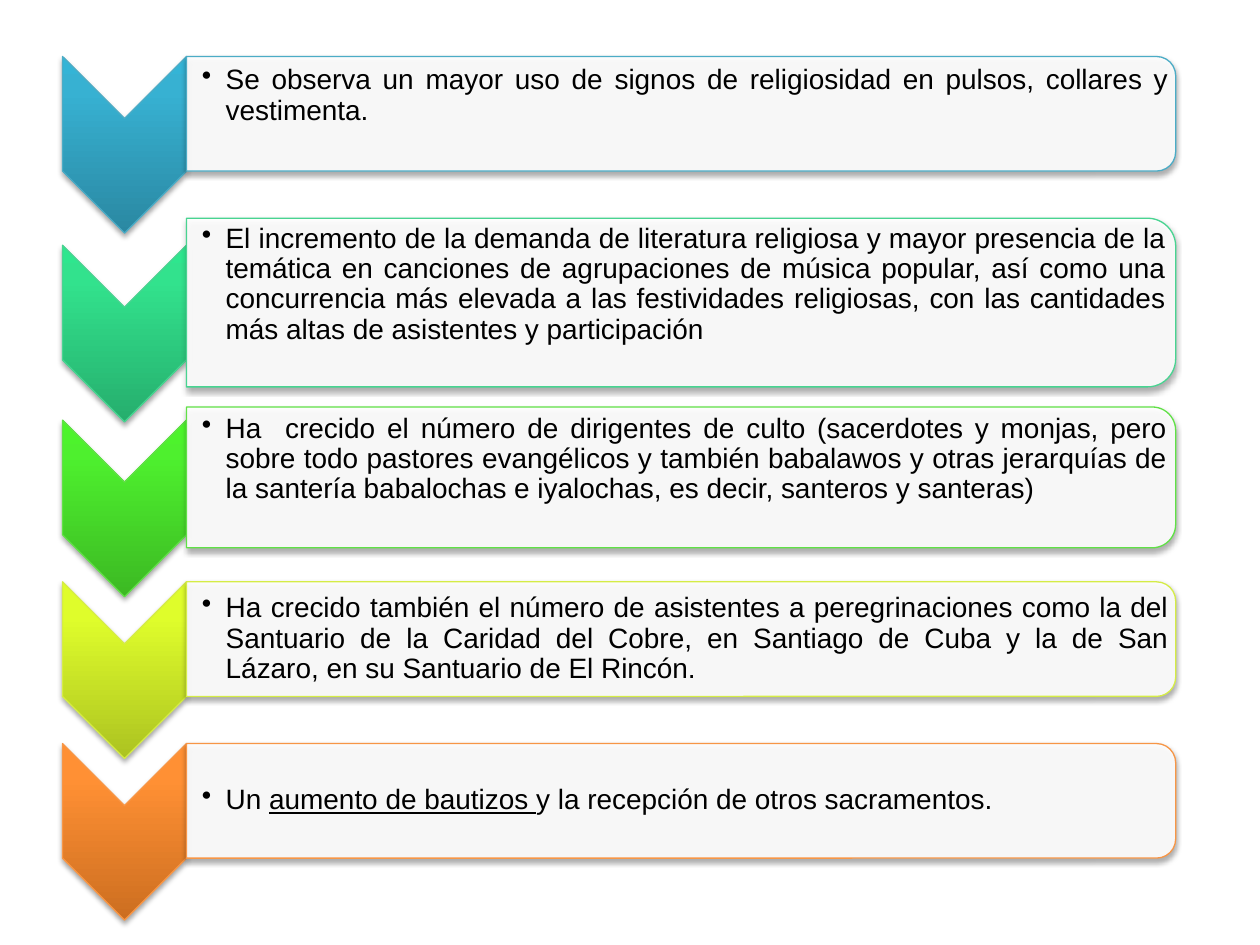
from lxml.etree import SubElement
from pptx import Presentation
from pptx.dml.color import RGBColor
from pptx.enum.shapes import MSO_SHAPE
from pptx.enum.text import MSO_ANCHOR, PP_ALIGN
from pptx.oxml import parse_xml
from pptx.oxml.ns import nsdecls, qn
from pptx.util import Cm, Pt

BLACK = RGBColor(0x00, 0x00, 0x00)
WHITE = RGBColor(0xFF, 0xFF, 0xFF)
# Line colour, then the gradient from bottom to top
BLUE = [RGBColor.from_string(c) for c in ("4BACC6", "2A88A2", "37B1D2", "34B4D6")]
TEAL = [RGBColor.from_string(c) for c in ("48D491", "26AE6D", "32E28D", "2EE68E")]
GREEN = [RGBColor.from_string(c) for c in ("60E146", "3CB923", "4EF02E", "4CF52A")]
LIME = [RGBColor.from_string(c) for c in ("D5EC46", "ACC321", "DFFD2B", "E1FF2B")]
ORANGE = [RGBColor.from_string(c) for c in ("F79646", "CC6E20", "FF9034", "FF9136")]

CHEVRON_LEFT, CHEVRON_WIDTH, CHEVRON_HEIGHT = Cm(1.26), Cm(2.5), Cm(3.56)
BOX_LEFT, BOX_WIDTH, BASE_HEIGHT = Cm(3.76), Cm(19.94), Cm(2.31)
ROW_PITCH = Cm(3.26)
FIRST_TOP = Cm(1.14)
LIFT = Cm(0.36)
JUSTIFY, LEFT = PP_ALIGN.JUSTIFY, PP_ALIGN.LEFT

# Palette, box height, text lift, alignment, (text, underlined) spans
ROWS = [
    (BLUE, BASE_HEIGHT, LIFT, JUSTIFY, [
        ("Se observa un mayor uso de signos de religiosidad en pulsos, collares y "
         "vestimenta.", False)]),
    (TEAL, Cm(3.4), LIFT, JUSTIFY, [
        ("El incremento de la demanda de literatura religiosa y mayor presencia de la "
         "temática en canciones de agrupaciones de música popular, así como una "
         "concurrencia más elevada a las festividades religiosas, con las cantidades "
         "más altas de asistentes y participación", False)]),
    (GREEN, Cm(2.84), LIFT, JUSTIFY, [
        ("Ha  crecido el número de dirigentes de culto (sacerdotes y monjas, pero "
         "sobre todo pastores evangélicos y también babalawos y otras jerarquías de "
         "la santería babalochas e iyalochas, es decir, santeros y santeras)", False)]),
    (LIME, BASE_HEIGHT, 0, JUSTIFY, [
        ("Ha crecido también el número de asistentes a peregrinaciones como la del "
         "Santuario de la Caridad del Cobre, en Santiago de Cuba y la de San "
         "Lázaro, en su Santuario de El Rincón.", False)]),
    (ORANGE, BASE_HEIGHT, 0, LEFT, [
        ("Un ", False), ("aumento de bautizos ", True),
        ("y la recepción de otros sacramentos.", False)]),
]


class ChevronList:
    """Draws the parts of a vertical chevron list on one slide."""

    font_name = "Arial"
    font_size = Pt(16)
    line_width = Pt(0.75)

    def __init__(self, page):
        self.page = page

    def turned_shape(self, kind, left, top, width, height, line_color):
        """Add a shape turned a quarter clockwise that shows in the given frame."""
        shift = (width - height) // 2
        shape = self.page.shapes.add_shape(kind, left + shift, top - shift, height, width)
        shape.rotation = 90
        shape.line.color.rgb = line_color
        shape.line.width = self.line_width
        shape.shadow.inherit = False
        effects = shape.element.spPr.find(qn("a:effectLst"))
        effects.append(parse_xml(
            f'<a:outerShdw {nsdecls("a")} blurRad="{Pt(3.1)}" dist="{Pt(1.8)}" '
            'dir="5400000" rotWithShape="0"><a:srgbClr val="000000">'
            '<a:alpha val="35000"/></a:srgbClr></a:outerShdw>'))
        return shape

    def chevron(self, top, palette):
        line_color, dark, middle, light = palette
        shape = self.turned_shape(MSO_SHAPE.CHEVRON, CHEVRON_LEFT, top,
                                  CHEVRON_WIDTH, CHEVRON_HEIGHT, line_color)
        shape.fill.background()
        properties = shape.element.spPr
        stops = "".join(
            f'<a:gs pos="{position}"><a:srgbClr val="{color}"/></a:gs>'
            for position, color in ((0, dark), (80000, middle), (100000, light)))
        gradient = parse_xml(
            f'<a:gradFill {nsdecls("a")} rotWithShape="0"><a:gsLst>{stops}</a:gsLst>'
            '<a:lin ang="16200000" scaled="0"/></a:gradFill>')
        properties.replace(properties.find(qn("a:noFill")), gradient)

    def box(self, top, height, line_color):
        shape = self.turned_shape(MSO_SHAPE.ROUND_2_SAME_RECTANGLE, BOX_LEFT, top,
                                  BOX_WIDTH, height, line_color)
        shape.fill.solid()
        shape.fill.fore_color.rgb = WHITE
        color = shape.element.spPr.find(qn("a:solidFill"))[0]
        SubElement(color, qn("a:alpha"), val="90000")

    def bullet_text(self, top, height, alignment, spans):
        width = BOX_WIDTH - int(height * 0.05)  # keeps clear of the round corners
        frame = self.page.shapes.add_textbox(BOX_LEFT, top, width, height).text_frame
        frame.word_wrap = True
        frame.vertical_anchor = MSO_ANCHOR.MIDDLE
        frame.margin_left = Cm(0.31)
        frame.margin_top = frame.margin_right = frame.margin_bottom = Cm(0.03)
        para = frame.paragraphs[0]
        para.alignment = alignment
        para.line_spacing = 0.9
        para.font.name = self.font_name
        para.font.size = self.font_size
        para.font.color.rgb = BLACK
        properties = para._p.get_or_add_pPr()
        properties.set("marL", str(Cm(0.48)))
        properties.set("indent", str(-Cm(0.48)))
        bullet = parse_xml(f'<a:buChar {nsdecls("a")} char="•"/>')
        properties.find(qn("a:defRPr")).addprevious(bullet)
        for text, underlined in spans:
            span = para.add_run()
            span.text = text
            span.font.name = self.font_name
            span.font.size = self.font_size
            span.font.color.rgb = BLACK
            if underlined:
                span.font.underline = True


def main():
    deck = Presentation()
    deck.slide_width, deck.slide_height = Cm(25.4), Cm(19.05)
    page = deck.slides.add_slide(deck.slide_layouts[6])
    chevron_list = ChevronList(page)

    top = FIRST_TOP
    for index, (palette, height, lift, alignment, spans) in enumerate(ROWS):
        overhang = (height - BASE_HEIGHT) // 2
        if index:
            top += ROW_PITCH + overhang
        box_top = top - overhang
        chevron_list.chevron(top, palette)
        chevron_list.box(box_top, height, palette[0])
        chevron_list.bullet_text(box_top - lift, height, alignment, spans)

    deck.save("out.pptx")


if __name__ == "__main__":
    main()
